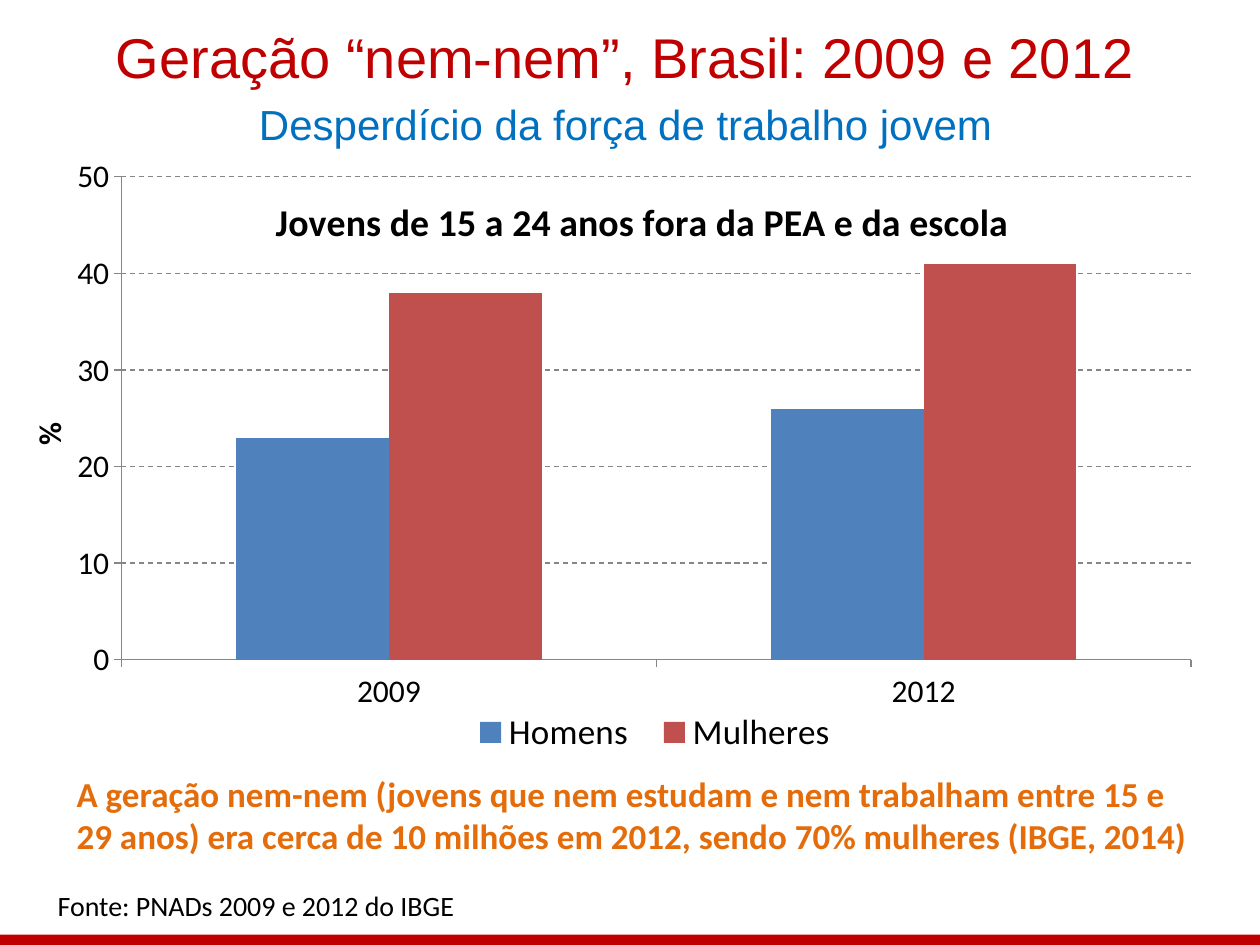
from lxml import etree
from pptx import Presentation
from pptx import util as u
from pptx.chart.data import CategoryChartData
from pptx.dml.color import RGBColor
from pptx.enum import chart as charts, dml, shapes, text
from pptx.oxml.ns import qn

COLOURS = {
    "red": "C00000", "blue": "0070C0", "orange": "E46C0A", "black": "000000",
    "grey": "868686", "men": "4F81BD", "women": "C0504D",
}
WIDTH, HEIGHT = 10, 7.5


def colour(name):
    return RGBColor.from_string(COLOURS[name])


def assign(target, values):
    for name, value in values.items():
        setattr(target, name, value)


class SlideBuilder:
    """Places elements by shares of the slide's width and height."""

    def __init__(self, presentation):
        self.slide = presentation.slides.add_slide(presentation.slide_layouts[6])

    def box(self, left, top, width, height):
        return [u.Inches(share * size) for share, size in
                zip((left, top, width, height), (WIDTH, HEIGHT) * 2)]

    def style(self, font, size, tint="black", name="Calibri", bold=False):
        assign(font, {"size": u.Pt(size), "name": name, "bold": bold})
        font.color.rgb = colour(tint)

    def bar(self, area, tint):
        shape = self.slide.shapes.add_shape(
            shapes.MSO_SHAPE.RECTANGLE, *self.box(*area))
        shape.shadow.inherit = False
        shape.fill.solid()
        shape.fill.fore_color.rgb = colour(tint)
        shape.line.fill.background()

    def text(self, area, lines, wrap=True):
        """Each line is (wording, font values, paragraph values)."""
        frame = self.slide.shapes.add_textbox(*self.box(*area)).text_frame
        frame.word_wrap = wrap
        for index, (wording, font, layout) in enumerate(lines):
            paragraph = frame.add_paragraph() if index else frame.paragraphs[0]
            assign(paragraph, layout)
            run = paragraph.add_run()
            run.text = wording
            self.style(run.font, **font)

    def arrange(self, element, position, **values):
        """Give a chart part a manual layout, as shares of the chart."""
        for old in element.findall(qn("c:layout")):
            element.remove(old)
        layout = etree.Element(qn("c:layout"))
        element.insert(position, layout)
        manual = etree.SubElement(layout, qn("c:manualLayout"))
        for tag, value in values.items():
            etree.SubElement(manual, qn("c:" + tag)).set("val", str(value))

    def title(self, owner, wording, size, x, y):
        frame = owner.text_frame
        frame.text = wording
        self.style(frame.paragraphs[0].runs[0].font, size, bold=True)
        self.arrange(owner._element, 1, xMode="edge", yMode="edge", x=x, y=y)

    def columns(self, area, categories, series, title, unit):
        data = CategoryChartData()
        data.categories = categories
        for name, values, _ in series:
            data.add_series(name, values)
        chart = self.slide.shapes.add_chart(
            charts.XL_CHART_TYPE.COLUMN_CLUSTERED, *self.box(*area), data).chart
        self.style(chart.font, 18)

        # Columns
        plot = chart.plots[0]
        assign(plot, {"gap_width": 150, "overlap": 0, "vary_by_categories": False})
        for column, (_, _, tint) in zip(plot.series, series):
            column.format.fill.solid()
            column.format.fill.fore_color.rgb = colour(tint)
        self.arrange(chart._chartSpace.find(".//" + qn("c:plotArea")), 0,
                     layoutTarget="inner", xMode="edge", yMode="edge",
                     x=0.083, y=0.051, w=0.886, h=0.764)

        # Axes and gridlines
        value_axis = chart.value_axis
        assign(value_axis, {"minimum_scale": 0, "maximum_scale": 50,
                            "major_unit": 10, "has_major_gridlines": True})
        value_axis.tick_labels.number_format = "0"
        value_axis.tick_labels.number_format_is_linked = False
        for axis in (value_axis, chart.category_axis):
            axis.major_tick_mark = charts.XL_TICK_MARK.OUTSIDE
        gridlines = value_axis.major_gridlines
        for part in (value_axis, chart.category_axis, gridlines):
            part.format.line.color.rgb = colour("grey")
            part.format.line.width = u.Pt(0.75)
        gridlines.format.line.dash_style = dml.MSO_LINE.DASH

        # Titles
        self.title(value_axis.axis_title, unit, 18, 0, 0.43)
        self.title(chart.chart_title, title, 21.6, 0.205, 0.07)
        chart.chart_title._element.find(qn("c:overlay")).set("val", "1")

        # Legend
        chart.has_legend = True
        legend = chart.legend
        assign(legend, {"position": charts.XL_LEGEND_POSITION.BOTTOM,
                        "include_in_layout": False})
        self.style(legend.font, 20)
        self.arrange(legend._element, 1, xMode="edge", yMode="edge",
                     x=0.36, y=0.89, w=0.33, h=0.08)


def main():
    presentation = Presentation()
    assign(presentation, {"slide_width": u.Inches(WIDTH),
                          "slide_height": u.Inches(HEIGHT)})
    builder = SlideBuilder(presentation)
    centre = text.PP_ALIGN.CENTER

    # Bottom band
    builder.bar((0, 0.989, 1, 0.011), "red")

    # Heading
    builder.text((0.043, 0.017, 0.907, 0.147), [
        ("Geração “nem-nem”, Brasil: 2009 e 2012",
         {"size": 32, "tint": "red", "name": "Arial"},
         {"alignment": centre, "space_before": u.Pt(3)}),
        ("Desperdício da força de trabalho jovem",
         {"size": 24, "tint": "blue", "name": "Arial"},
         {"alignment": centre, "space_before": u.Pt(5)}),
    ])

    # Source
    builder.text((0.036, 0.934, 0.34, 0.049), [
        ("Fonte: PNADs 2009 e 2012 do IBGE", {"size": 16}, {})], wrap=False)

    # Chart
    builder.columns(
        (0.017, 0.153, 0.958, 0.669), ["2009", "2012"],
        [("Homens", (23, 26), "men"), ("Mulheres", (38, 41), "women")],
        "Jovens de 15 a 24 anos fora da PEA e da escola", "%")

    # Conclusion
    builder.text((0.051, 0.811, 0.917, 0.103), [
        ("A geração nem-nem (jovens que nem estudam e nem trabalham entre 15 e "
         "29 anos) era cerca de 10 milhões em 2012, sendo 70% mulheres (IBGE, 2014)",
         {"size": 20, "tint": "orange", "bold": True}, {})])

    presentation.save("out.pptx")


if __name__ == "__main__":
    main()
